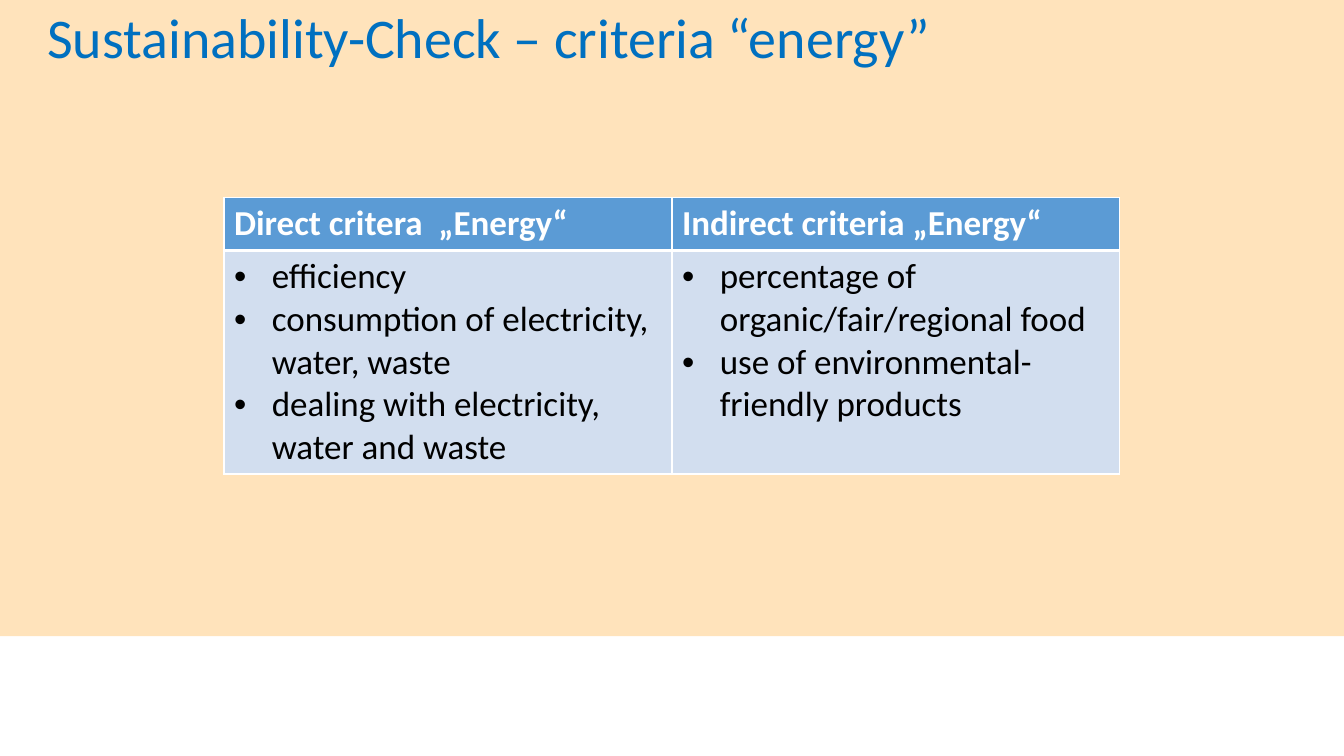
import pptx
import pptx.util
import pptx.dml.color
import pptx.enum.shapes
import pptx.enum.text
import pptx.oxml
import pptx.oxml.ns

Pt = pptx.util.Pt
TEXT = pptx.enum.text


def color(code):
    return pptx.dml.color.RGBColor.from_string(code)


def node(tag, parent=None, **attrs):
    """Make a drawing element and append it to a parent, if one is given."""
    item = pptx.oxml.parse_xml(f"<a:{tag} {pptx.oxml.ns.nsdecls('a')}/>")
    for key, value in attrs.items():
        item.set(key, str(value))
    if parent is not None:
        parent.append(item)
    return item


def apply(target, values):
    for key, value in values.items():
        setattr(target, key, value)


class Deck:
    face = "Calibri"
    edge = "FFFFFF"
    indent = Pt(27)

    def __init__(self, width, height):
        self.file = pptx.Presentation()
        apply(self.file, dict(slide_width=Pt(width), slide_height=Pt(height)))
        self.slide = self.file.slides.add_slide(self.file.slide_layouts[5])

    def font(self, par, size, code, bold=False):
        apply(par.font, dict(name=self.face, size=Pt(size), bold=bold))
        par.font.color.rgb = color(code)

    def panel(self, left, top, width, height, code, alpha):
        kind = pptx.enum.shapes.MSO_SHAPE.RECTANGLE
        panel = self.slide.shapes.add_shape(
            kind, Pt(left), Pt(top), Pt(width), Pt(height))
        panel.shadow.inherit = False
        panel.line.fill.background()
        panel.fill.solid()
        panel.fill.fore_color.rgb = color(code)
        tint = panel.fill._xPr.find(".//" + pptx.oxml.ns.qn("a:srgbClr"))
        node("alpha", tint, val=alpha * 1000)
        # Put the panel behind the title
        self.slide.shapes._spTree.insert(2, panel._element)

    def title(self, text, left, top, width, height, size, code):
        title = self.slide.shapes.title
        apply(title, dict(left=Pt(left), top=Pt(top),
                          width=Pt(width), height=Pt(height)))
        frame = title.text_frame
        frame.text = text
        apply(frame, dict(word_wrap=True, margin_top=Pt(8),
                          auto_size=TEXT.MSO_AUTO_SIZE.NONE,
                          vertical_anchor=TEXT.MSO_ANCHOR.TOP))
        par = frame.paragraphs[0]
        apply(par, dict(alignment=TEXT.PP_ALIGN.LEFT, line_spacing=0.9))
        self.font(par, size, code)

    def border(self, cell, **widths):
        props = cell._tc.get_or_add_tcPr()
        for spot, side in enumerate("LRTB"):
            line = node("ln" + side, w=Pt(widths.get(side, 1)))
            node("srgbClr", node("solidFill", line), val=self.edge)
            props.insert(spot, line)

    def cell(self, cell, lines, fill, size, code, bold=False, bullet=None):
        cell.fill.solid()
        cell.fill.fore_color.rgb = color(fill)
        cell.text = "\n".join(lines)
        for par in cell.text_frame.paragraphs:
            if bullet:
                props = par._p.get_or_add_pPr()
                props.set("marL", str(self.indent))
                props.set("indent", str(-self.indent))
                node("buFont", props, typeface="Arial")
                node("buChar", props, char=bullet)
            self.font(par, size, code, bold)

    def table(self, left, top, width, heights, columns, size):
        table = self.slide.shapes.add_table(
            2, len(columns), Pt(left), Pt(top), Pt(width),
            Pt(sum(heights))).table
        table.horz_banding = False
        for row, height in zip(table.rows, heights):
            row.height = Pt(height)
        for col, (head, items) in enumerate(columns):
            table.columns[col].width = Pt(width / len(columns))
            top_cell, body = table.cell(0, col), table.cell(1, col)
            self.cell(top_cell, [head], "5B9BD5", size, "FFFFFF", bold=True)
            self.cell(body, items, "D2DEEF", size, "000000", bullet="•")
            self.border(top_cell, B=3)
            self.border(body, T=3)


def main():
    deck = Deck(960, 540)

    # Background and title
    deck.panel(0, 0, 960, 454.5, "FFAA2D", 32)
    deck.title("Sustainability-Check – criteria “energy”",
               26.5, -0.5, 828, 104.5, 40, "0070C0")

    # Criteria table
    deck.table(160, 141, 640, (38, 159), [
        ("Direct critera  „Energy“", [
            "efficiency",
            "consumption of electricity, water, waste",
            "dealing with electricity, water and waste"]),
        ("Indirect criteria „Energy“", [
            "percentage of organic/fair/regional food",
            "use of environmental-friendly products"]),
    ], 25)

    deck.file.save("out.pptx")


if __name__ == "__main__":
    main()
